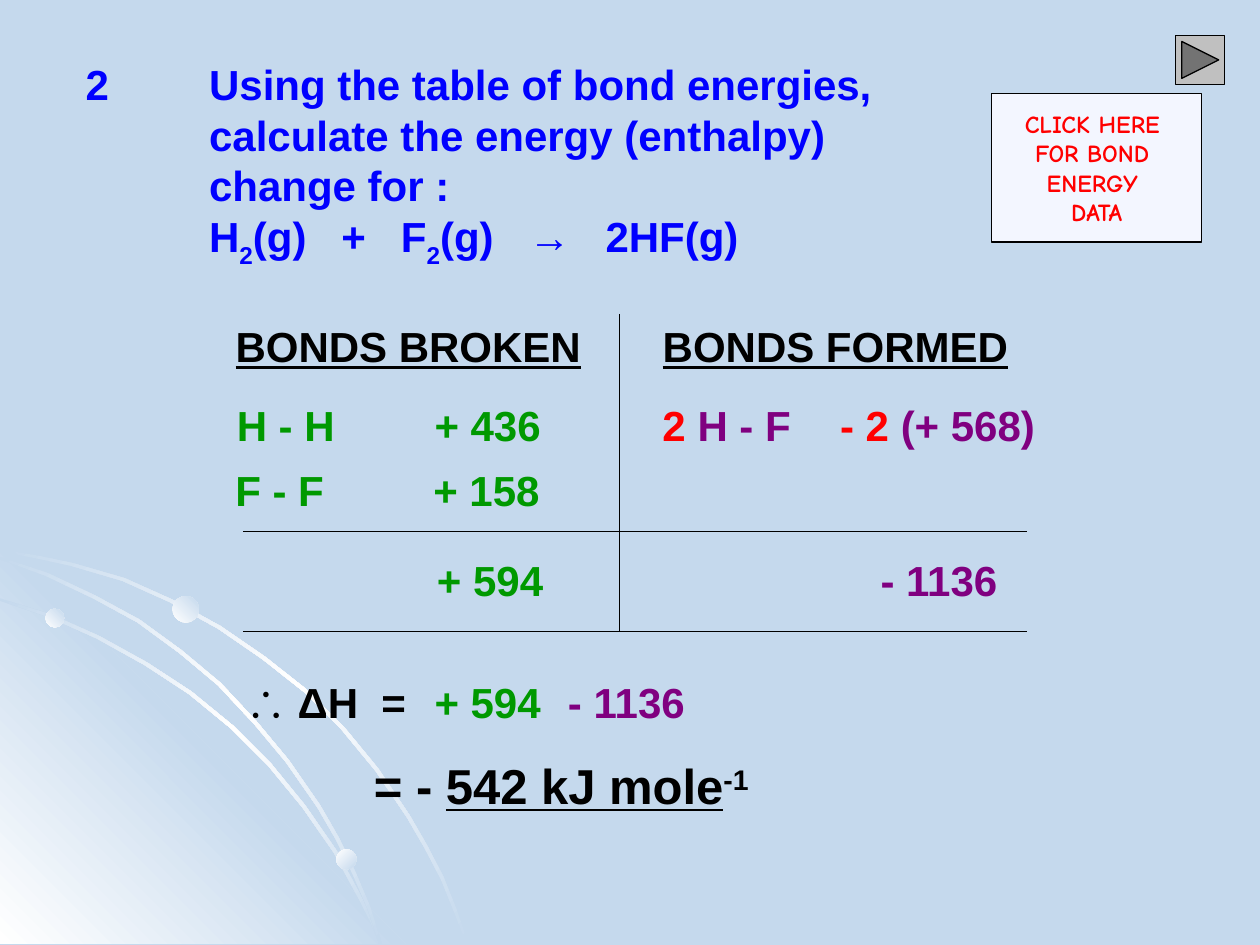
"""Build the bond energy calculation slide for hydrogen and fluorine."""
from copy import deepcopy

from pptx import Presentation
from pptx.dml.color import RGBColor as RGB
from pptx.enum.shapes import MSO_CONNECTOR as LINK, MSO_SHAPE as SHAPE
from pptx.enum.text import MSO_ANCHOR as ANCHOR, MSO_AUTO_SIZE as FIT, PP_ALIGN as ALIGN
from pptx.oxml.ns import qn
from pptx.util import Pt

THEME = {
    "font": "Arial", "button_font": "Comic Neue",
    "body": 24, "result": 28, "button": 14,
    "sky": "C5D9ED", "white": "FFFFFF", "black": "000000",
    "question": "0000FF", "broken": "009900", "formed": "800080", "factor": "FF0000",
    "button_fill": "F3F6FF", "next_fill": "C0C0C0",
    "no_grid": "{2D5ABB26-0587-4C30-8999-92F81FD0307C}",
}

WIDE, NARROW = {"gap": 13.3}, {"gap": 6.7}
SUB, SUPER = {"baseline": -30}, {"baseline": 30}

QUESTION = [
    [("2\tUsing the table of bond energies, calculate the energy (enthalpy) change for :", {})],
    [("\tH", {}), ("2", SUB), ("(g)", {}), (" ", WIDE), ("+", {}), (" ", WIDE),
     ("F", {}), ("2", SUB), ("(g)", {}), (" ", WIDE), ("→", {}), (" ", WIDE), ("2HF(g)", {})],
]
QUESTION_BOX = (41.8, 30.2, 499.7, 122.4)
QUESTION_INDENT = 70.6

HEADINGS = ["BONDS BROKEN", "", "BONDS FORMED"]
HEADING_BOX = (127.4, 173.5, 504.7, 51.1)
HEADING_WIDTHS = [226.8, 17.3, 260.6]

BROKEN, FORMED = {"color": "broken"}, {"color": "formed"}
FACTOR = {"color": "factor"}
BONDS_ROW, SECOND_ROW, TOTAL_ROW, CHANGE_ROW, RESULT_ROW = 224.6, 262.1, 313.2, 383, 428.4
WORKING = [
    (128.2, BONDS_ROW, 101.5, True, [("H - H", BROKEN)]),
    (127.4, SECOND_ROW, 96.5, True, [("F - F", BROKEN)]),
    (371.5, BONDS_ROW, 108, True, [("2 ", FACTOR), ("H - F", FORMED)]),
    (473, BONDS_ROW, 158.4, True, [("- 2 ", FACTOR), ("(+ 568)", FORMED)]),
    (241.2, BONDS_ROW, 75.6, False, [("+ 436", BROKEN)]),
    (240.5, SECOND_ROW, 75.6, False, [("+ 158", BROKEN)]),
    (242.6, TOTAL_ROW, 75.6, False, [("+ 594", BROKEN)]),
    (496.1, TOTAL_ROW, 158.4, True, [("- 1136", FORMED)]),
    (133.2, CHANGE_ROW, 113.8, True, [("∴ ΔH", {}), (" ", NARROW), ("=", {})]),
    (241.2, CHANGE_ROW, 75.6, False, [("+ 594", BROKEN)]),
    (317.5, CHANGE_ROW, 158.4, True, [("- 1136", FORMED)]),
    (206.6, RESULT_ROW, 264.2, True, [
        ("= - ", {"size": "result"}),
        ("542 kJ mole", {"size": "result", "underline": True}),
        ("-1", {"size": "result", **SUPER})]),
]
RULES = [(354.2, 179.3, 354.2, 360.7), (139, 303.8, 586.8, 303.8), (139, 360.7, 586.8, 360.7)]

DATA_BUTTON = ["CLICK HERE ", "FOR BOND ", "ENERGY ", "DATA"]
DATA_BUTTON_BOX = (566.6, 53.3, 120.2, 85)
NEXT_BUTTON_BOX = (671.8, 20.2, 28.1, 28.1)

FLOOR = 539.3
RIBBON_WIDTH = 1.5
GLOW = [(0, FLOOR), (0, 307.4), (231.8, FLOOR)]
OUTER_ARC = [
    (0, 315.4), (20.2, 319), (40.3, 323.3), (69.8, 331.9), (97.2, 344.2), (124.6, 359.3),
    (149.8, 376.6), (173.5, 395.3), (195.1, 416.9), (214.6, 440.6), (232.6, 467.3),
    (242.6, 484.6), (252, 502.6), (259.2, 520.6), (266.4, FLOOR)]
INNER_ARC = [
    (0, 343.4), (28.1, 352.8), (55.4, 365), (82.8, 380.2), (108, 396.7), (131.8, 416.2),
    (153.4, 437.8), (172.8, 461.5), (190.8, 487.4), (205.2, 514.1), (211.7, 527), (216.7, FLOOR)]
MIDDLE_ARC = [
    (0, 319.7), (25.9, 329), (53.3, 342), (78.5, 355.7), (102.2, 373), (124.6, 391.7),
    (145.4, 414), (163.4, 435.6), (181.4, 461.5), (192.2, 480.2), (201.6, 499.7),
    (210.2, 519.8), (216.7, FLOOR)]
BEADS = [(25.9, 347.8, 10.8, 45), (192.2, 485.3, 11.5, 315), (98.6, 340.6, 15.1, 45)]


def color(key):
    return RGB.from_string(THEME[key])


def points(values):
    return [Pt(value) for value in values]


def shade(part, keys, angle):
    part.shadow.inherit = False
    part.line.fill.background()
    part.fill.gradient()
    part.fill.gradient_angle = angle
    stops = part.element.spPr.find(".//" + qn("a:gsLst"))
    while len(stops) < len(keys):
        stops.append(deepcopy(stops[-1]))
    for index, (stop, key) in enumerate(zip(part.fill.gradient_stops, keys)):
        stop.position = index / (len(keys) - 1)
        stop.color.rgb = color(key)


def add_outline(slide, corners, keys, angle):
    builder = slide.shapes.build_freeform(*points(corners[0]), scale=1.0)
    builder.add_line_segments([points(corner) for corner in corners[1:]], close=True)
    shade(builder.convert_to_shape(), keys, angle)


def ribbon(edge):
    far_edge = [(x + RIBBON_WIDTH * (x > 0), y - RIBBON_WIDTH * (y < FLOOR)) for x, y in edge]
    return edge + far_edge[::-1]


def add_run(paragraph, text, size="body", ink="black", font="font",
            underline=False, baseline=0, gap=0):
    run = paragraph.add_run()
    run.text = text
    run.font.name, run.font.size, run.font.bold = THEME[font], Pt(THEME[size]), True
    run.font.color.rgb = color(ink)
    run.font.underline = underline
    properties = run.font._element
    if baseline:
        properties.set("baseline", str(baseline * 1000))
    if gap:
        properties.set("spc", str(round(gap * 100)))


def add_text(slide, box, paragraphs, wrap=True, ink="black", indent=0):
    frame = slide.shapes.add_textbox(*points(box)).text_frame
    frame.word_wrap, frame.auto_size = wrap, FIT.SHAPE_TO_FIT_TEXT
    for index, runs in enumerate(paragraphs):
        paragraph = frame.add_paragraph() if index else frame.paragraphs[0]
        if indent:
            properties = paragraph._p.get_or_add_pPr()
            properties.set("marL", str(Pt(indent)))
            properties.set("indent", str(-Pt(indent)))
        for text, style in runs:
            options = {key: value for key, value in style.items() if key != "color"}
            add_run(paragraph, text, ink=style.get("color", ink), **options)


def add_headings(slide):
    table = slide.shapes.add_table(1, len(HEADINGS), *points(HEADING_BOX)).table
    table.first_row = table.horz_banding = False
    table._tbl.tblPr.find(qn("a:tableStyleId")).text = THEME["no_grid"]
    for column, width, cell, heading in zip(
            table.columns, HEADING_WIDTHS, table.rows[0].cells, HEADINGS):
        column.width = Pt(width)
        cell.fill.background()
        cell.vertical_anchor = ANCHOR.MIDDLE
        if heading:
            add_run(cell.text_frame.paragraphs[0], heading, underline=True)


def add_rule(slide, ends):
    rule = slide.shapes.add_connector(LINK.STRAIGHT, *points(ends))
    rule.line.color.rgb, rule.line.width = color("black"), Pt(0.75)
    properties = rule._element.spPr
    properties.append(properties.makeelement(qn("a:effectLst"), {}))


def add_button(slide, preset, box, fill):
    button = slide.shapes.add_shape(preset, *points(box))
    button.shadow.inherit = False
    button.fill.solid()
    button.fill.fore_color.rgb = color(fill)
    button.line.color.rgb, button.line.width = color("black"), Pt(0.75)
    return button


def main():
    deck = Presentation()
    deck.slide_width, deck.slide_height = Pt(720), Pt(540)
    slide = deck.slides.add_slide(deck.slide_layouts[6])
    slide.background.fill.solid()
    slide.background.fill.fore_color.rgb = color("sky")

    add_outline(slide, ribbon(OUTER_ARC), ["sky", "white", "sky"], 315)
    add_outline(slide, GLOW, ["white", "sky", "white"], 45)
    for arc in (INNER_ARC, MIDDLE_ARC):
        add_outline(slide, ribbon(arc), ["sky", "white", "sky"], 315)
    for left, top, size, angle in BEADS:
        bead = slide.shapes.add_shape(SHAPE.OVAL, *points((left, top, size, size)))
        shade(bead, ["white", "sky"], angle)

    add_text(slide, QUESTION_BOX, QUESTION, ink="question", indent=QUESTION_INDENT)
    add_headings(slide)
    for left, top, width, wrap, runs in WORKING:
        height = 41 if top == RESULT_ROW else 36
        add_text(slide, (left, top, width, height), [runs], wrap)
    for ends in RULES:
        add_rule(slide, ends)

    data_button = add_button(slide, SHAPE.ACTION_BUTTON_CUSTOM, DATA_BUTTON_BOX, "button_fill")
    frame = data_button.text_frame
    frame.word_wrap, frame.vertical_anchor = False, ANCHOR.MIDDLE
    for index, label in enumerate(DATA_BUTTON):
        paragraph = frame.add_paragraph() if index else frame.paragraphs[0]
        paragraph.alignment = ALIGN.CENTER
        add_run(paragraph, label, "button", "factor", "button_font")
    add_button(slide, SHAPE.ACTION_BUTTON_FORWARD_OR_NEXT, NEXT_BUTTON_BOX, "next_fill")
    deck.save("out.pptx")


if __name__ == "__main__":
    main()
